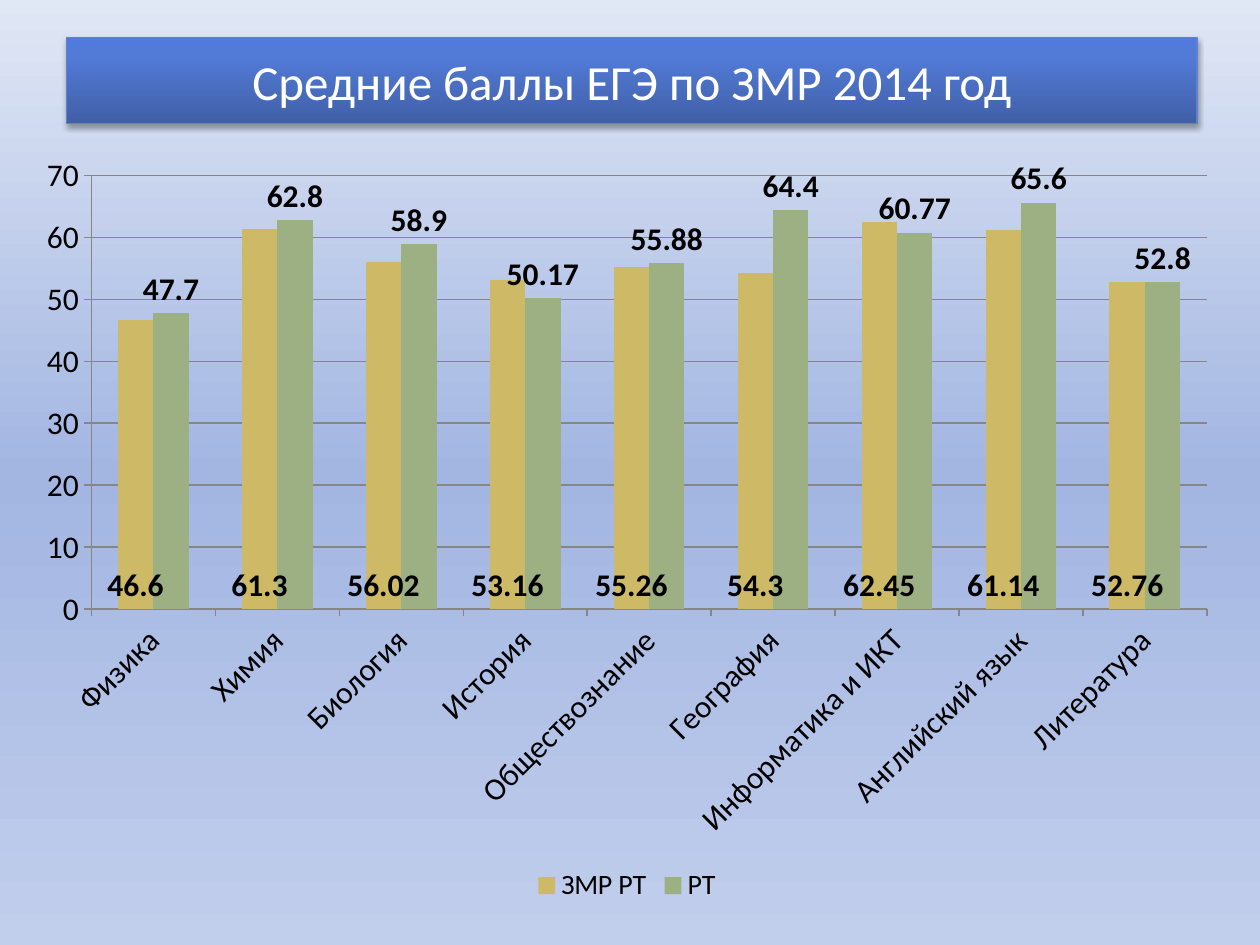
import pptx
import pptx.chart.data
import pptx.dml.color
import pptx.enum.chart
import pptx.enum.shapes
import pptx.enum.text
import pptx.oxml
import pptx.oxml.ns
import pptx.util
from lxml import etree

Pt = pptx.util.Pt
RGB = pptx.dml.color.RGBColor.from_string
qn = pptx.oxml.ns.qn

FONT = "Calibri"
COLORS = {
    "text": "000000", "title": "FFFFFF", "banner_line": "6081CD",
    "axis": "868686", "district": "CEB966", "republic": "9CB084",
}
BACKGROUND_STOPS = [(0, "E0E7F5"), (50, "A3B6E2"), (100, "C1CEEC")]
BANNER_STOPS = [(0, "405FA6"), (80, "527BD8"), (100, "507ADC")]


def set_gradient(fill, stops, angle):
    """Fill with (percent, colour) stops; angle is counter-clockwise."""
    fill.gradient()
    fill.gradient_angle = angle
    stop_list = fill.gradient_stops[0]._gs.getparent()
    for old_stop in list(stop_list):
        stop_list.remove(old_stop)
    for percent, color in stops:
        stop = etree.SubElement(stop_list, qn("a:gs"), pos=str(percent * 1000))
        etree.SubElement(stop, qn("a:srgbClr"), val=color)


prs = pptx.Presentation()
prs.slide_width, prs.slide_height = Pt(720), Pt(540)
slide = prs.slides.add_slide(prs.slide_layouts[6])
set_gradient(slide.background.fill, BACKGROUND_STOPS, 270)

# Exam scores by subject
scores = pptx.chart.data.CategoryChartData()
scores.categories = [
    "Физика", "Химия", "Биология", "История", "Обществознание", "География",
    "Информатика и ИКТ", "Английский язык", "Литература",
]
scores.add_series("ЗМР РТ", [46.6, 61.3, 56.02, 53.16, 55.26, 54.3, 62.45, 61.14, 52.76])
scores.add_series("РТ", [47.7, 62.8, 58.9, 50.17, 55.88, 64.4, 60.77, 65.6, 52.8])
chart = slide.shapes.add_chart(
    pptx.enum.chart.XL_CHART_TYPE.COLUMN_CLUSTERED,
    Pt(13), Pt(80.6), Pt(690.5), Pt(438.5), scores,
).chart
chart.has_title = False
chart.font.name = FONT
chart.font.size = Pt(18)
chart.font.color.rgb = RGB(COLORS["text"])

chart.has_legend = True
chart.legend.position = pptx.enum.chart.XL_LEGEND_POSITION.BOTTOM
chart.legend.include_in_layout = False
chart.legend.font.size = Pt(16)

for axis in (chart.category_axis, chart.value_axis):
    axis.major_tick_mark = pptx.enum.chart.XL_TICK_MARK.OUTSIDE
    axis.minor_tick_mark = pptx.enum.chart.XL_TICK_MARK.NONE
    axis.tick_labels.font.size = Pt(18)
    axis.format.line.color.rgb = RGB(COLORS["axis"])
    axis.format.line.width = Pt(0.75)
subject_text = chart.category_axis._element.find(qn("c:txPr"))
subject_text.find(qn("a:bodyPr")).set("rot", str(-45 * 60000))

chart.value_axis.minimum_scale = 0
chart.value_axis.maximum_scale = 70
chart.value_axis.major_unit = 10
chart.value_axis.has_major_gridlines = True
gridline = chart.value_axis.major_gridlines.format.line
gridline.color.rgb = RGB(COLORS["axis"])
gridline.width = Pt(0.75)

plot = chart.plots[0]
plot.gap_width = 150
plot.overlap = 0
plot.vary_by_categories = False
label_position = pptx.enum.chart.XL_LABEL_POSITION
styles = [
    ("district", label_position.INSIDE_BASE),
    ("republic", label_position.OUTSIDE_END),
]
for series, (color, position) in zip(plot.series, styles):
    series.format.fill.solid()
    series.format.fill.fore_color.rgb = RGB(COLORS[color])
    labels = series.data_labels
    labels.show_value = True
    labels.position = position
    labels.font.size = Pt(18)
    labels.font.bold = True

# Title banner: a pentagon arrow with its point flattened
banner = slide.shapes.add_shape(
    pptx.enum.shapes.MSO_SHAPE.PENTAGON, Pt(38), Pt(21.6), Pt(646), Pt(49))
banner.adjustments[0] = 0
set_gradient(banner.fill, BANNER_STOPS, 90)
banner.line.color.rgb = RGB(COLORS["banner_line"])
banner.line.width = Pt(0.75)
banner.shadow.inherit = False
effects = banner._element.spPr.find(qn("a:effectLst"))
shadow = etree.SubElement(
    effects, qn("a:outerShdw"), blurRad=str(Pt(3.1)), dist=str(Pt(1.8)),
    dir=str(90 * 60000), rotWithShape="0")
shadow_color = etree.SubElement(shadow, qn("a:srgbClr"), val=COLORS["text"])
etree.SubElement(shadow_color, qn("a:alpha"), val="35000")

banner.text_frame.word_wrap = True
banner.text_frame.vertical_anchor = pptx.enum.text.MSO_ANCHOR.MIDDLE
title = banner.text_frame.paragraphs[0]
title.text = "Средние баллы ЕГЭ по ЗМР 2014 год"
title.alignment = pptx.enum.text.PP_ALIGN.CENTER
title.font.name = FONT
title.font.size = Pt(28)
title.font.color.rgb = RGB(COLORS["title"])

prs.save("out.pptx")
